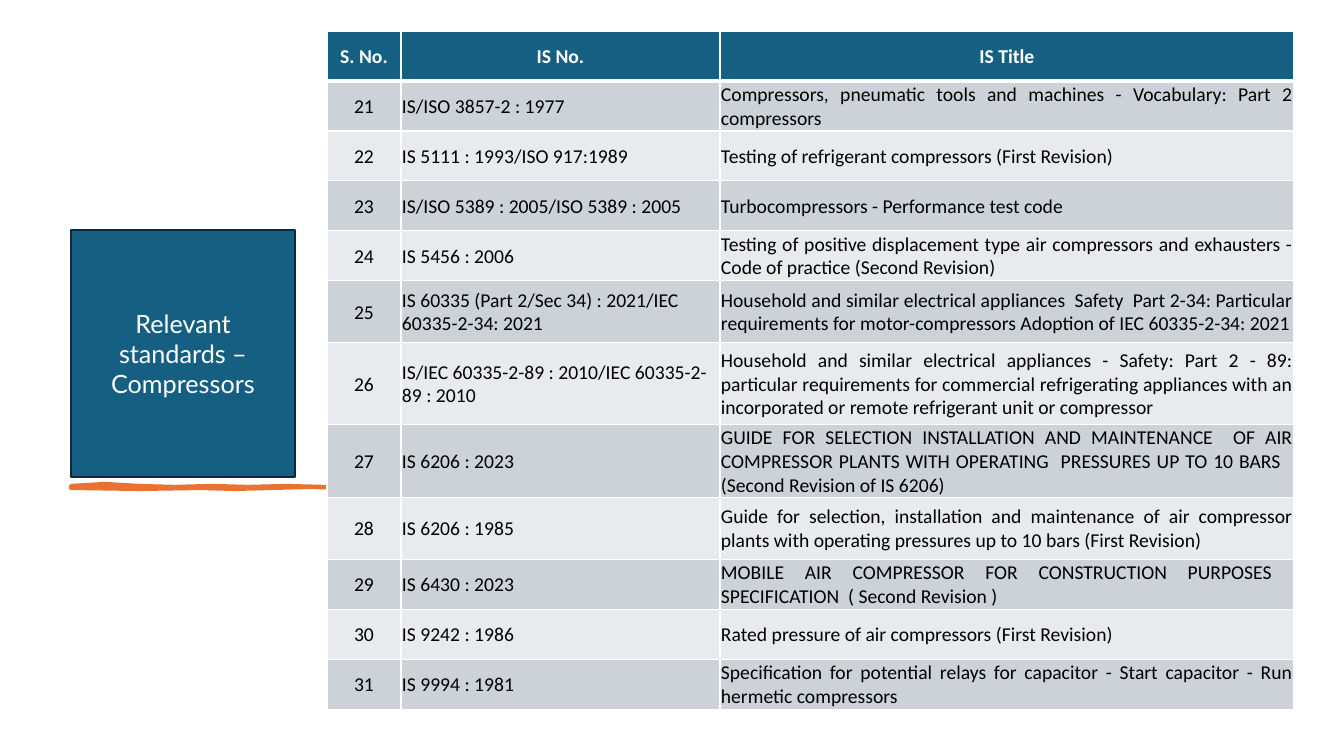
"""Build the slide listing Indian standards relevant to compressors."""
from lxml import etree
from pptx import Presentation
from pptx.dml.color import RGBColor
from pptx.enum.text import MSO_ANCHOR, MSO_AUTO_SIZE, PP_ALIGN
from pptx.oxml.ns import qn
from pptx.util import Emu, Pt

CENTER, LEFT, JUSTIFY = PP_ALIGN.CENTER, PP_ALIGN.LEFT, PP_ALIGN.JUSTIFY
MIDDLE = MSO_ANCHOR.MIDDLE
NO_AUTOFIT = MSO_AUTO_SIZE.NONE
EMU_PER_PX = 914400 / 100.8
COLORS = {
    "teal": "156082", "dark_teal": "092A39", "orange": "E97132",
    "odd_row": "CCD2D8", "even_row": "E8EAED", "white": "FFFFFF", "black": "000000",
}
COLORS_RGB = {name: RGBColor.from_string(value) for name, value in COLORS.items()}


def px(length):
    return Emu(round(length * EMU_PER_PX))


def write_text(frame, text, font="Calibri", size=14, color="black", bold=False, align=LEFT):
    paragraph = frame.paragraphs[0]
    paragraph.alignment = align
    run = paragraph.add_run()
    run.text = text
    run.font.name = font
    run.font.size = Pt(size)
    run.font.bold = bold
    run.font.color.rgb = COLORS_RGB[color]


presentation = Presentation()
presentation.slide_width, presentation.slide_height = px(1344), px(756)
slide = presentation.slides.add_slide(presentation.slide_layouts[5])

heading = slide.shapes.title
heading.left, heading.top, heading.width, heading.height = px(71), px(230), px(224), px(247)
pentagon = etree.SubElement(heading._element.spPr, qn("a:prstGeom"), prst="homePlate")
etree.SubElement(pentagon, qn("a:avLst"))
heading.fill.solid()
heading.fill.fore_color.rgb = COLORS_RGB["teal"]
heading.line.color.rgb = COLORS_RGB["dark_teal"]
heading.line.width = Pt(1.5)
heading.text_frame.word_wrap = True
heading.text_frame.auto_size = NO_AUTOFIT
heading.text_frame.vertical_anchor = MIDDLE
write_text(heading.text_frame, "Relevant standards – Compressors",
           font="Lato", size=18, color="white", align=CENTER)

STROKE_POINTS = [
    (105, 484), (139, 486), (175, 487), (211, 486), (248, 487), (286, 486), (324, 487),
    (362, 486), (395, 485), (429, 486), (429, 488), (390, 489), (351, 488), (310, 487),
    (272, 488), (235, 489), (201, 488), (140, 489), (71, 488),
]
stroke_builder = slide.shapes.build_freeform(71, 486, scale=EMU_PER_PX)
stroke_builder.add_line_segments(STROKE_POINTS, close=True)
brush_stroke = stroke_builder.convert_to_shape()
brush_stroke.shadow.inherit = False
brush_stroke.fill.solid()
brush_stroke.fill.fore_color.rgb = COLORS_RGB["orange"]
brush_stroke.line.color.rgb = COLORS_RGB["orange"]
brush_stroke.line.width = Pt(3)

STANDARDS = [
    ("S. No.", "IS No.", "IS Title"),
    ("21", "IS/ISO 3857-2 : 1977",
     "Compressors, pneumatic tools and machines - Vocabulary: Part 2 compressors"),
    ("22", "IS 5111 : 1993/ISO 917:1989",
     "Testing of refrigerant compressors (First Revision)"),
    ("23", "IS/ISO 5389 : 2005/ISO 5389 : 2005",
     "Turbocompressors - Performance test code"),
    ("24", "IS 5456 : 2006",
     "Testing of positive displacement type air compressors and exhausters - "
     "Code of practice (Second Revision)"),
    ("25", "IS 60335 (Part 2/Sec 34) : 2021/IEC 60335-2-34: 2021",
     "Household and similar electrical appliances  Safety  Part 2-34: Particular "
     "requirements for motor-compressors Adoption of IEC 60335-2-34: 2021"),
    ("26", "IS/IEC 60335-2-89 : 2010/IEC 60335-2-89 : 2010",
     "Household and similar electrical appliances - Safety: Part 2 - 89: particular "
     "requirements for commercial refrigerating appliances with an incorporated or "
     "remote refrigerant unit or compressor"),
    ("27", "IS 6206 : 2023",
     "GUIDE FOR SELECTION INSTALLATION AND MAINTENANCE  OF AIR COMPRESSOR PLANTS "
     "WITH OPERATING  PRESSURES UP TO 10 BARS   (Second Revision of IS 6206)"),
    ("28", "IS 6206 : 1985",
     "Guide for selection, installation and maintenance of air compressor plants "
     "with operating pressures up to 10 bars (First Revision)"),
    ("29", "IS 6430 : 2023",
     "MOBILE AIR COMPRESSOR FOR CONSTRUCTION PURPOSES  SPECIFICATION  ( Second Revision )"),
    ("30", "IS 9242 : 1986", "Rated pressure of air compressors (First Revision)"),
    ("31", "IS 9994 : 1981",
     "Specification for potential relays for capacitor - Start capacitor - "
     "Run hermetic compressors"),
]
COLUMN_WIDTHS = [74, 319, 574]
ROW_HEIGHTS = [50, 50, 50, 50, 50, 62, 82, 72, 62, 50, 50, 50]
COLUMN_ALIGNMENTS = [CENTER, LEFT, JUSTIFY]

standards_table = slide.shapes.add_table(
    len(STANDARDS), len(COLUMN_WIDTHS), px(327), px(31),
    px(sum(COLUMN_WIDTHS)), px(sum(ROW_HEIGHTS))).table
standards_table.horz_banding = False
for column, width in zip(standards_table.columns, COLUMN_WIDTHS):
    column.width = px(width)

for row_index, (standard, height) in enumerate(zip(STANDARDS, ROW_HEIGHTS)):
    standards_table.rows[row_index].height = px(height)
    is_header = row_index == 0
    row_color = "teal" if is_header else "odd_row" if row_index % 2 else "even_row"
    border_widths = {"a:lnL": 1, "a:lnR": 1,
                     "a:lnT": 3 if row_index == 1 else 1, "a:lnB": 3 if is_header else 1}
    for column_index, text in enumerate(standard):
        cell = standards_table.cell(row_index, column_index)
        cell.margin_left = cell.margin_right = cell.margin_top = px(1)
        cell.margin_bottom = 0
        cell.vertical_anchor = MIDDLE
        cell_properties = cell._tc.get_or_add_tcPr()
        for side, width in border_widths.items():
            border = etree.SubElement(cell_properties, qn(side), w=str(Pt(width)))
            border_fill = etree.SubElement(border, qn("a:solidFill"))
            etree.SubElement(border_fill, qn("a:srgbClr"), val=COLORS["white"])
        cell.fill.solid()
        cell.fill.fore_color.rgb = COLORS_RGB[row_color]
        write_text(cell.text_frame, text, bold=is_header,
                   color="white" if is_header else "black",
                   align=CENTER if is_header else COLUMN_ALIGNMENTS[column_index])

presentation.save("out.pptx")
